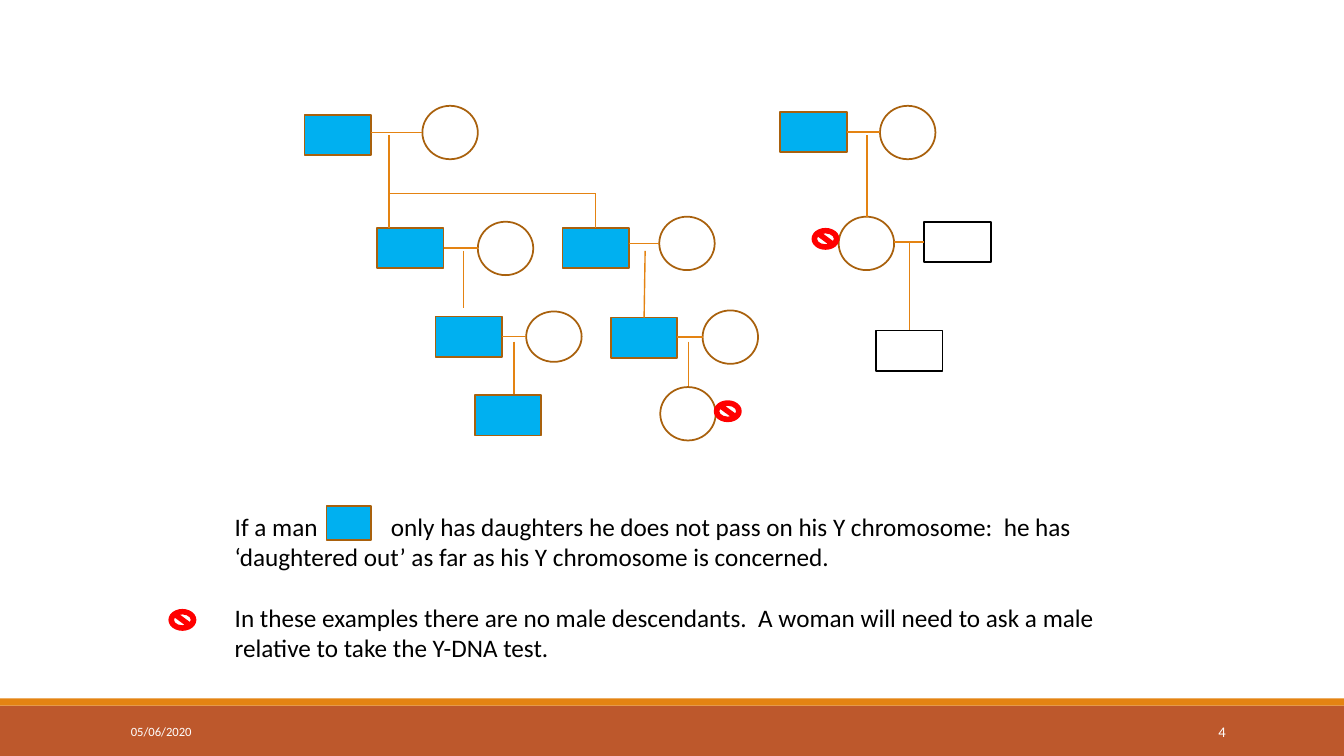
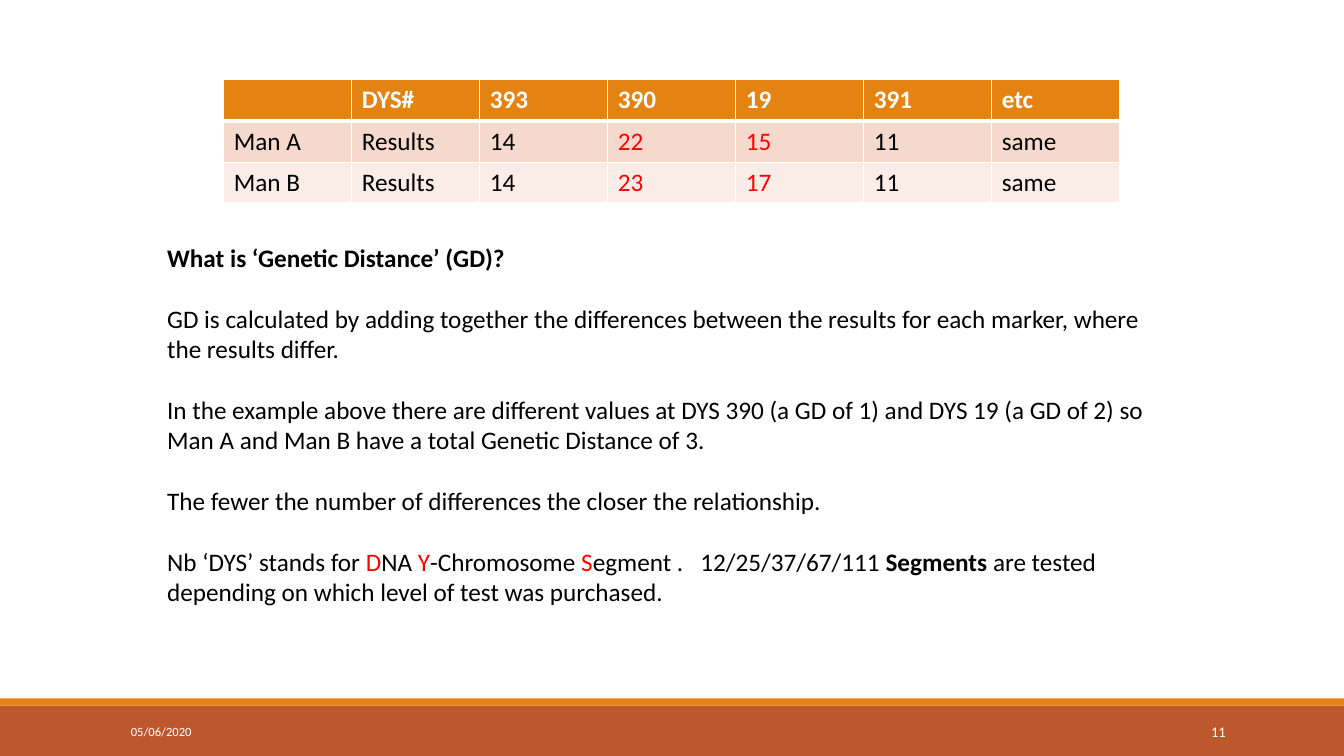
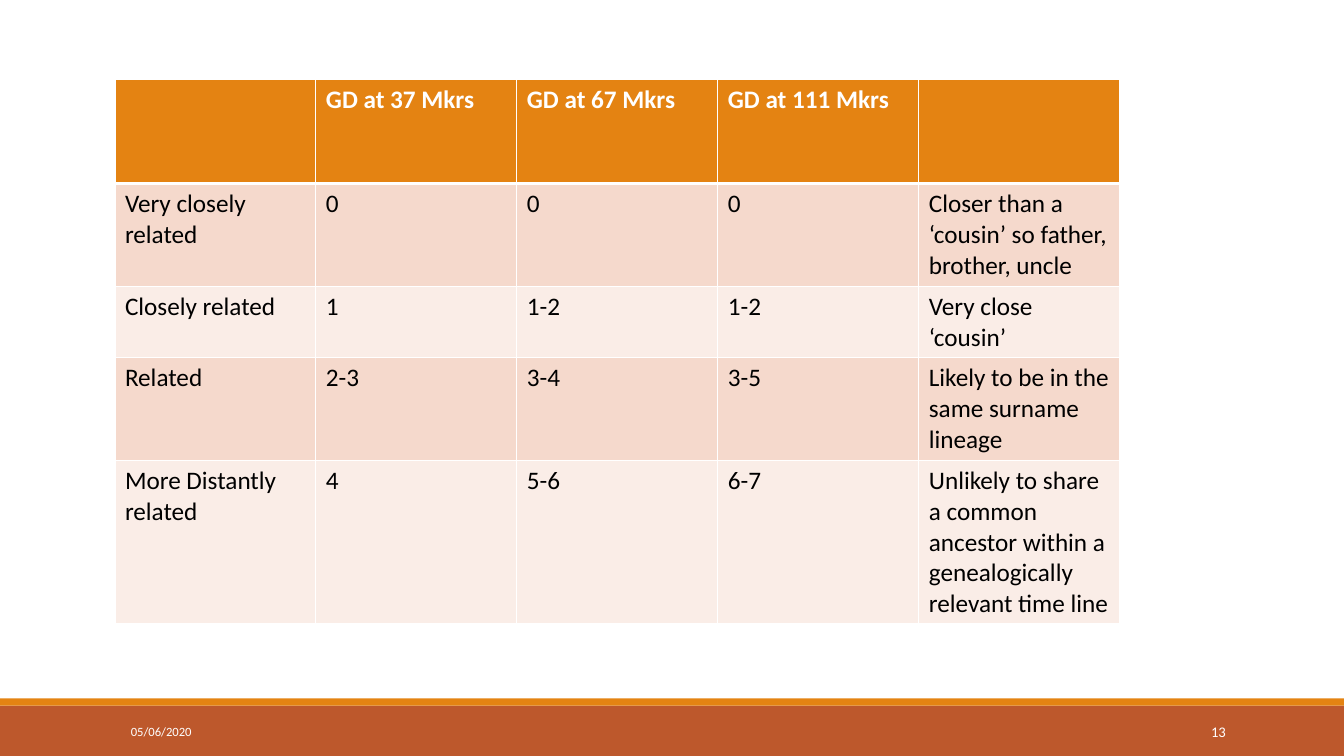
"""Builds three slides on Y-DNA inheritance and genetic distance."""
from dataclasses import dataclass, replace
from typing import Any, NamedTuple, Optional

from lxml.etree import SubElement
from pptx import Presentation
from pptx.dml.color import RGBColor
from pptx.enum.shapes import MSO_CONNECTOR as CONN, MSO_SHAPE as SHAPE
from pptx.enum.text import MSO_ANCHOR as ANCHOR, PP_ALIGN as ALIGN
from pptx.oxml.ns import qn
from pptx.slide import Slide
from pptx.util import Inches, Pt

CELL = 0.1
COLS, ROWS = 133.33, 75
FONT = "Calibri"
BLACK, WHITE, RED = "000000", "FFFFFF", "FF0000"
ORANGE, RUST, BROWN, BLUE = "E48312", "BD582C", "A9610D", "00B0F0"
BANDING = ("FAEDE7", "F5D9CC")


def rgb(color: str) -> RGBColor:
    return RGBColor.from_string(color)


def grid(*cells: float) -> list[int]:
    return [Inches(c * CELL) for c in cells]


def apply(obj: Any, values: dict[str, Any]) -> None:
    for name, value in values.items():
        setattr(obj, name, value)


class Span(NamedTuple):
    text: str
    color: str = BLACK
    bold: bool = False
    size: float = 18


class Para(NamedTuple):
    spans: list[Span]
    tab: Optional[float] = None
    align: ALIGN = ALIGN.LEFT


class Line(NamedTuple):
    col1: float
    row1: float
    col2: float
    row2: float


@dataclass(frozen=True)
class Kind:
    preset: SHAPE
    cols: float
    rows: float
    fill: Optional[str]
    line: Optional[str]


@dataclass(frozen=True)
class Node:
    kind: Kind
    col: float
    row: float

    @property
    def left(self) -> float:
        return self.col - self.kind.cols / 2

    @property
    def top(self) -> float:
        return self.row - self.kind.rows / 2

    @property
    def right(self) -> float:
        return self.col + self.kind.cols / 2


MAN = Kind(SHAPE.RECTANGLE, 6.6, 4, BLUE, BROWN)
OTHER_MAN = replace(MAN, fill=None, line=BLACK)
KEY_MAN = replace(MAN, cols=4.4, rows=3.4)
WOMAN = Kind(SHAPE.OVAL, 5.5, 5.3, None, BROWN)
STOP = Kind(SHAPE.NO_SYMBOL, 2.6, 2, RED, RED)

COUPLES = [
    (Node(MAN, 33.5, 13.4), Node(WOMAN, 44.65, 13.15)),
    (Node(MAN, 40.7, 24.6), Node(WOMAN, 50.15, 24.65)),
    (Node(MAN, 59.1, 24.6), Node(WOMAN, 68.15, 24.15)),
    (Node(MAN, 46.5, 33.4), Node(replace(WOMAN, rows=5), 54.95, 33.4)),
    (Node(MAN, 63.9, 33.5), Node(WOMAN, 72.45, 33.45)),
    (Node(MAN, 80.7, 13.1), Node(WOMAN, 90.05, 13.15)),
    (Node(WOMAN, 85.95, 24.15), Node(OTHER_MAN, 95, 24)),
]
LEAVES = [
    Node(MAN, 50.4, 41.2), Node(WOMAN, 68.25, 41.05),
    Node(OTHER_MAN, 90.2, 34.8),
    *(Node(STOP, c, r) for c, r in ((72.2, 40.8), (81.9, 23.7), (18.1, 61.5))),
]
DESCENT = [
    Line(38.6, 13.4, 38.6, 22.6), Line(38.6, 19.2, 59.1, 19.2),
    Line(59.1, 19.2, 59.1, 22.6), Line(46, 24.9, 46, 30.6),
    Line(64, 24.9, 63.9, 31.5), Line(51, 33.9, 51, 39.3),
    Line(68.3, 33.9, 68.3, 38.4), Line(86, 13.4, 86, 21.5),
    Line(90.2, 24, 90.2, 32.8),
]
DAUGHTERED_OUT = [
    Para([Span("If a man\tonly has daughters he does not pass on his Y chromosome:  "
               "he has ‘daughtered out’ as far as his Y chromosome is concerned.")], 15.5),
    Para([Span("In these examples there are no male descendants.  A woman will need "
               "to ask a male relative to take the Y-DNA test.")]),
]
DISTANCE = [
    Para([Span("What is ‘Genetic Distance’ (GD)?", bold=True)]),
    Para([Span("GD is calculated by adding together the differences between the "
               "results for each marker, where the results differ.")]),
    Para([Span("In the example above there are different values at DYS 390 (a GD of 1) "
               "and DYS 19 (a GD of 2) so Man A and Man B have a total Genetic "
               "Distance of 3.")]),
    Para([Span("The fewer the number of differences the closer the relationship.")]),
    Para([Span("Nb ‘DYS’ stands for "), Span("D", RED), Span("NA "), Span("Y", RED),
          Span("-Chromosome "), Span("S", RED), Span("egment .\t12/25/37/67/111 "),
          Span("Segments", bold=True),
          Span(" are tested depending on which level of test was purchased.")], 52.9),
]
MARKERS = [
    ("", "DYS#", "393", "390", "19", "391", "etc"),
    ("Man A", "Results", "14", "22", "15", "11", "same"),
    ("Man B", "Results", "14", "23", "17", "11", "same"),
]
RELATEDNESS = [
    ("", "GD at 37 Mkrs", "GD at 67 Mkrs", "GD at 111 Mkrs", ""),
    ("Very closely related", "0", "0", "0",
     "Closer than a ‘cousin’ so father, brother, uncle"),
    ("Closely related", "1", "1-2", "1-2", "Very close ‘cousin’"),
    ("Related", "2-3", "3-4", "3-5", "Likely to be in the same surname lineage"),
    ("More Distantly related", "4", "5-6", "6-7",
     "Unlikely to share a common ancestor within a genealogically relevant time line"),
]


def add_spans(p: Any, spans: list[Span]) -> None:
    for span in spans:
        r = p.add_run()
        r.text = span.text
        apply(r.font, {"name": FONT, "size": Pt(span.size), "bold": span.bold})
        r.font.color.rgb = rgb(span.color)


def add_text(s: Slide, box: tuple[float, ...], paras: list[Para],
             anchor: ANCHOR = ANCHOR.TOP) -> None:
    tf = s.shapes.add_textbox(*grid(*box)).text_frame
    apply(tf, {"word_wrap": True, "vertical_anchor": anchor})
    for i, para in enumerate(paras):
        p = tf.add_paragraph() if i else tf.paragraphs[0]
        if para.tab:
            tabs = SubElement(p._p.get_or_add_pPr(), qn("a:tabLst"))
            SubElement(tabs, qn("a:tab"), pos=str(Inches(para.tab * CELL)), algn="l")
        apply(p, {"alignment": para.align, "space_before": Pt(22 if i else 0)})
        add_spans(p, para.spans)


def add_node(s: Slide, node: Node) -> None:
    kind = node.kind
    sp = s.shapes.add_shape(kind.preset, *grid(node.left, node.top, kind.cols, kind.rows))
    sp.shadow.inherit = False
    for part, color in ((sp.fill, kind.fill), (sp.line.fill, kind.line)):
        if color:
            part.solid()
            part.fore_color.rgb = rgb(color)
        else:
            part.background()
    if kind.line:
        sp.line.width = Pt(1.25)


def add_line(s: Slide, line: Line) -> None:
    cx = s.shapes.add_connector(CONN.STRAIGHT, *grid(*line))
    cx.line.width = Pt(1)
    cx.line.color.rgb = rgb(ORANGE)
    SubElement(cx._element.spPr, qn("a:effectLst"))


def add_borders(cell: Any, row: int) -> None:
    widths = {"L": 1, "R": 1, "T": 3 if row == 1 else 1, "B": 1 if row else 3}
    for side, width in widths.items():
        ln = SubElement(cell._tc.get_or_add_tcPr(), qn(f"a:ln{side}"), w=str(Pt(width)))
        SubElement(SubElement(ln, qn("a:solidFill")), qn("a:srgbClr"), val=WHITE)


def add_grid_table(s: Slide, col: float, width: float, heights: list[float],
                   rows: list[tuple[str, ...]], red: tuple[int, ...] = ()) -> None:
    box = grid(col, 7.9, width, sum(heights))
    table = s.shapes.add_table(len(rows), len(rows[0]), *box).table
    for column in table.columns:
        column.width = Inches(width * CELL / len(rows[0]))
    for i, (height, texts) in enumerate(zip(heights, rows)):
        table.rows[i].height = Inches(height * CELL)
        for j, text in enumerate(texts):
            cell = table.cell(i, j)
            add_borders(cell, i)
            cell.fill.solid()
            cell.fill.fore_color.rgb = rgb(BANDING[i % 2] if i else ORANGE)
            color = WHITE if i == 0 else RED if j in red else BLACK
            if text:
                add_spans(cell.text_frame.paragraphs[0], [Span(text, color, i == 0)])


def add_slide(prs: Any, number: int) -> Slide:
    s = prs.slides.add_slide(prs.slide_layouts[6])
    for top, height, color in ((70, 5, RUST), (69.3, 0.7, ORANGE)):
        band = Kind(SHAPE.RECTANGLE, COLS, height, color, None)
        add_node(s, Node(band, COLS / 2, top + height / 2))
    add_text(s, (108.3, 70.6, 14.3, 4),
             [Para([Span(str(number), WHITE, size=10.5)], align=ALIGN.RIGHT)], ANCHOR.MIDDLE)
    add_text(s, (12, 70.6, 27, 4),
             [Para([Span("05/06/2020", WHITE, size=9)])], ANCHOR.MIDDLE)
    return s


def draw_family_tree(s: Slide) -> None:
    for first, second in COUPLES:
        add_node(s, first)
        add_node(s, second)
        row = min(first.row, second.row)
        add_line(s, Line(first.right, row, second.left, row))
    for line in DESCENT:
        add_line(s, line)
    for leaf in LEAVES:
        add_node(s, leaf)
    add_text(s, (22.3, 50.2, 94.2, 16.2), DAUGHTERED_OUT)
    add_node(s, Node(KEY_MAN, 34.6, 51.9))


def main() -> None:
    prs = Presentation()
    width, height = grid(COLS, ROWS)
    apply(prs, {"slide_width": width, "slide_height": height})
    draw_family_tree(add_slide(prs, 4))
    s = add_slide(prs, 11)
    add_text(s, (15.6, 23.5, 102.1, 40.4), DISTANCE)
    add_grid_table(s, 22.2, 88.9, [4.1, 4.1, 3.8], MARKERS, red=(3, 4))
    add_grid_table(add_slide(prs, 13), 11.4, 99.7, [10.3, 10.2, 7.1, 10.2, 16.2], RELATEDNESS)
    prs.save("out.pptx")


if __name__ == "__main__":
    main()
